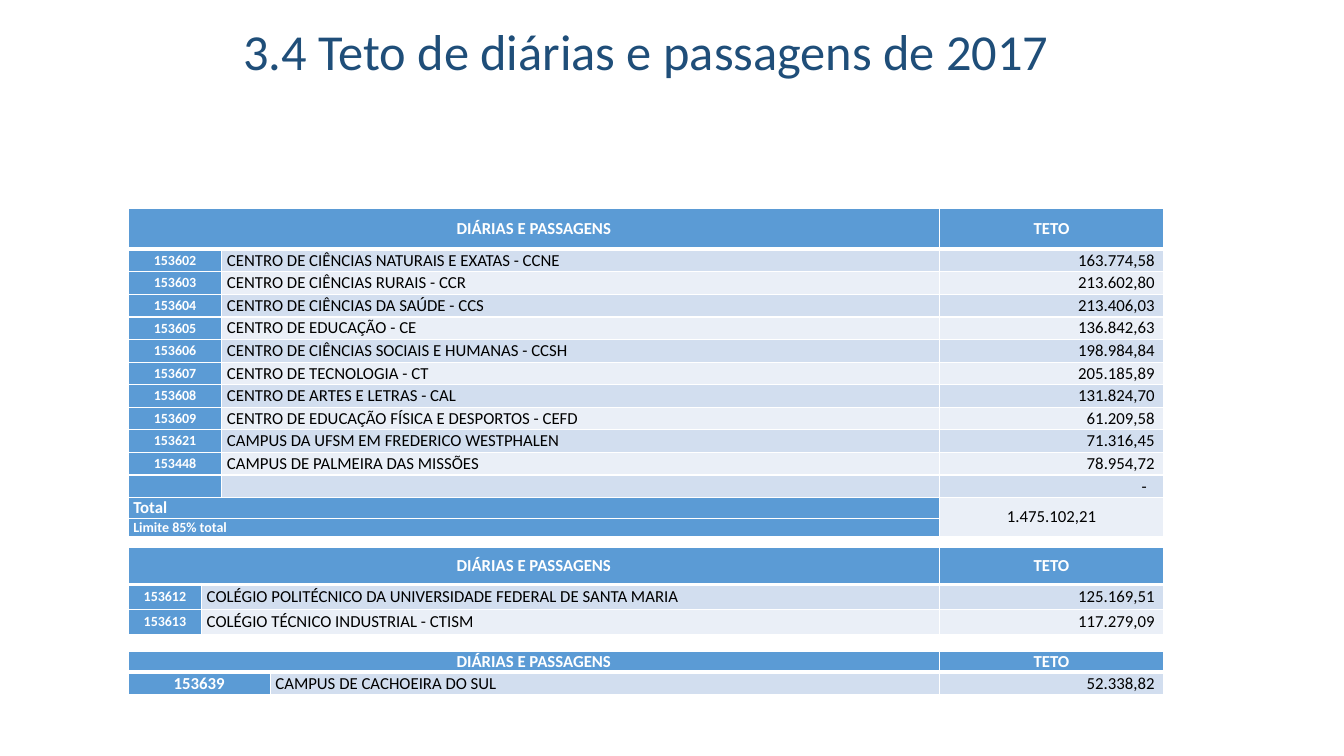
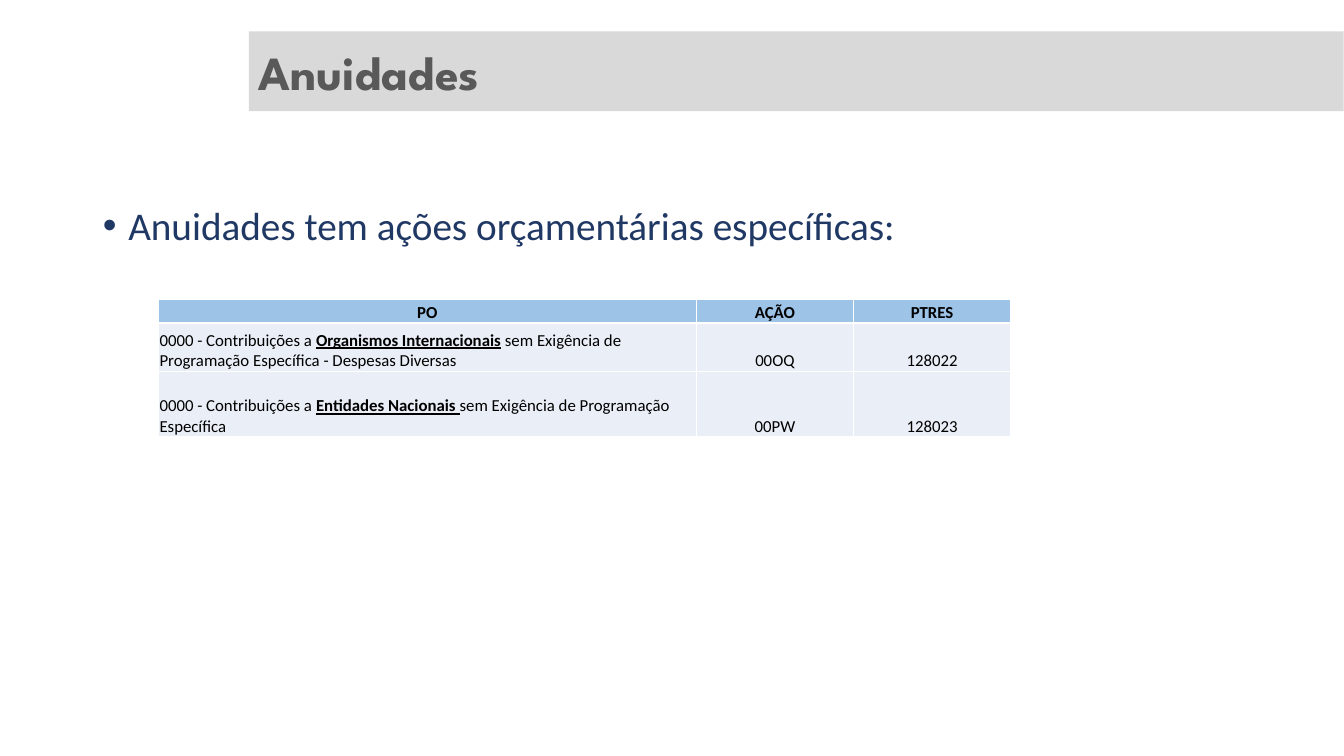
from lxml.etree import SubElement
from pptx import Presentation
from pptx.dml.color import RGBColor
from pptx.enum.text import MSO_ANCHOR as Anchor, MSO_AUTO_SIZE as AutoSize, PP_ALIGN as Align
from pptx.oxml.ns import qn
from pptx.util import Cm, Pt

# Shared look
FONT = "Calibri"
WHITE, BLACK = "FFFFFF", "000000"
BLUE, SKY = "5B9BD5", "9DC3E6"
BANDS = ("D2DEEF", "EAEFF7")

# Content: code, unit, ceiling
CENTRES = [
    ("153602", "CENTRO DE CIÊNCIAS NATURAIS E EXATAS - CCNE", "163.774,58"),
    ("153603", "CENTRO DE CIÊNCIAS RURAIS - CCR", "213.602,80"),
    ("153604", "CENTRO DE CIÊNCIAS DA SAÚDE - CCS", "213.406,03"),
    ("153605", "CENTRO DE EDUCAÇÃO - CE", "136.842,63"),
    ("153606", "CENTRO DE CIÊNCIAS SOCIAIS E HUMANAS - CCSH", "198.984,84"),
    ("153607", "CENTRO DE TECNOLOGIA - CT", "205.185,89"),
    ("153608", "CENTRO DE ARTES E LETRAS - CAL", "131.824,70"),
    ("153609", "CENTRO DE EDUCAÇÃO FÍSICA E DESPORTOS - CEFD", "61.209,58"),
    ("153621", "CAMPUS DA UFSM EM FREDERICO WESTPHALEN", "71.316,45"),
    ("153448", "CAMPUS DE PALMEIRA DAS MISSÕES", "78.954,72"),
    ("", "", "-"),
]
SCHOOLS = [
    ("153612", "COLÉGIO POLITÉCNICO DA UNIVERSIDADE FEDERAL DE SANTA MARIA", "125.169,51"),
    ("153613", "COLÉGIO TÉCNICO INDUSTRIAL - CTISM", "117.279,09"),
]
CAMPUSES = [("153639", "CAMPUS DE CACHOEIRA DO SUL", "52.338,82")]

# Plain text, or spans of (text, emphasised)
FEES = [
    ([("0000 - Contribuições a ", False), ("Organismos Internacionais", True),
      (" sem Exigência de Programação Específica - Despesas Diversas", False)],
     "00OQ", "128022"),
    ([("0000 - Contribuições a ", False), ("Entidades Nacionais ", True),
      ("sem Exigência de Programação Específica", False)],
     "00PW", "128023"),
]


def rgb(value):
    return RGBColor.from_string(value)


def write_span(para, text, size=12, color=BLACK, bold=False, underline=False, font=FONT):
    span = para.add_run()
    span.text = text
    span.font.name = font
    span.font.size = Pt(size)
    span.font.bold = bold
    span.font.underline = underline
    span.font.color.rgb = rgb(color)


def set_borders(cell, **widths):
    """White cell borders, one point wide unless a side says otherwise."""
    properties = cell._tc.get_or_add_tcPr()
    for side in "LRTB":
        line = SubElement(properties, qn(f"a:ln{side}"), w=str(Pt(widths.get(side, 1))))
        SubElement(SubElement(line, qn("a:solidFill")), qn("a:srgbClr"), val=WHITE)


def fill_cell(cell, content, fill, size=12, align=Align.LEFT, anchor=Anchor.MIDDLE,
              inset=0.13, right=None, borders=None, **style):
    set_borders(cell, **(borders or {}))
    cell.fill.solid()
    cell.fill.fore_color.rgb = rgb(fill)
    cell.vertical_anchor = anchor
    cell.margin_left = Cm(inset)
    cell.margin_right = Cm(inset if right is None else right)
    cell.margin_top = cell.margin_bottom = Cm(0)
    para = cell.text_frame.paragraphs[0]
    para.alignment = align
    if not content:
        SubElement(para._p, qn("a:endParaRPr"), sz=str(size * 100))
    elif isinstance(content, str):
        write_span(para, content, size, **style)
    else:
        for text, strong in content:
            write_span(para, text, size, bold=strong, underline=strong, **style)


def add_grid(slide, left, top, widths, heights):
    frame = slide.shapes.add_table(len(heights), len(widths), Cm(left), Cm(top),
                                   Cm(sum(widths)), Cm(sum(heights)))
    table = frame.table
    table.first_row = table.horz_banding = False
    for column, width in zip(table.columns, widths):
        column.width = Cm(width)
    for row, height in zip(table.rows, heights):
        row.height = Cm(height)
    return table


def add_ceiling_table(slide, top, code_width, units, heights, code_size=10):
    """Header and one row a unit; the code column widens into the name column."""
    table = add_grid(slide, 3.23, top, (code_width, 20.45 - code_width, 5.64), heights)
    label = dict(fill=BLUE, color=WHITE, bold=True)
    for column, text in enumerate(("DIÁRIAS E PASSAGENS", "", "TETO")):
        fill_cell(table.cell(0, column), text, align=Align.CENTER, borders={"B": 3}, **label)
    table.cell(0, 0).merge(table.cell(0, 1))
    for row, (code, name, ceiling) in enumerate(units, 1):
        band = BANDS[(row - 1) % 2]
        borders = {"T": 3 if row == 1 else 1}
        fill_cell(table.cell(row, 0), code, size=code_size, align=Align.CENTER,
                  borders=borders, **label)
        fill_cell(table.cell(row, 1), name, band, borders=borders)
        fill_cell(table.cell(row, 2), ceiling, band, align=Align.RIGHT,
                  right=0.42 if ceiling == "-" else 0.22, borders=borders)
    return table


def add_totals(table, first):
    """Two label rows beside one tall total cell."""
    for row, text, size in ((first, "Total", 12), (first + 1, "Limite 85% total", 10)):
        fill_cell(table.cell(row, 0), text, BLUE, size, color=WHITE, bold=True)
        fill_cell(table.cell(row, 1), "", BLUE, size)
        fill_cell(table.cell(row, 2), "1.475.102,21" if row == first else "",
                  BANDS[1], size, Align.CENTER)
        table.cell(row, 0).merge(table.cell(row, 1))
    table.cell(first, 2).merge(table.cell(first + 1, 2))


def add_fee_table(slide):
    table = add_grid(slide, 3.99, 7.54, (13.56, 3.96, 3.96), (0.6, 1.22, 1.65))
    for row, texts in enumerate([("PO", "AÇÃO", "PTRES"), *FEES]):
        for column, content in enumerate(texts):
            style = {"bold": True} if row == 0 else {}
            fill_cell(table.cell(row, column), content, BANDS[1] if row else SKY,
                      align=Align.LEFT if row and column == 0 else Align.CENTER,
                      anchor=Anchor.BOTTOM, inset=0.03, **style)


def write_placeholder(box, text, left, top, width, height, align=Align.LEFT,
                      anchor=Anchor.TOP, spacing=1.0, **style):
    box.left, box.top, box.width, box.height = map(Cm, (left, top, width, height))
    frame = box.text_frame
    frame.word_wrap = True
    frame.auto_size = AutoSize.NONE
    frame.vertical_anchor = anchor
    para = frame.paragraphs[0]
    para.alignment = align
    para.line_spacing = spacing
    para.space_before = Pt(0)
    write_span(para, text, **style)
    return para


def build_ceilings(deck):
    slide = deck.slides.add_slide(deck.slide_layouts[5])
    write_placeholder(slide.shapes.title, "3.4 Teto de diárias e passagens de 2017",
                      1.68, 0.79, 29.21, 3.68, align=Align.CENTER, spacing=0.7,
                      size=36, color="1F4E79")
    heights = [1.02] + [0.57] * len(CENTRES) + [0.52, 0.46]
    centres = add_ceiling_table(slide, 5.26, 2.36, CENTRES, heights)
    add_totals(centres, len(CENTRES) + 1)
    add_ceiling_table(slide, 13.79, 1.85, SCHOOLS, (0.94, 0.63, 0.63))
    add_ceiling_table(slide, 16.41, 3.58, CAMPUSES, (0.53, 0.56), code_size=12)


def build_fees(deck):
    slide = deck.slides.add_slide(deck.slide_layouts[1])
    title = slide.shapes.title
    write_placeholder(title, "Anuidades", 6.27, 0.79, 27.59, 2.01, anchor=Anchor.MIDDLE,
                      size=34, color="595959", bold=True, font="League Spartan")
    title.fill.solid()
    title.fill.fore_color.rgb = rgb("D9D9D9")
    para = write_placeholder(slide.placeholders[1],
                             "Anuidades tem ações orçamentárias específicas:",
                             2.34, 5.08, 29.21, 12.09, spacing=0.9, size=28, color="203864")
    properties = para._p.get_or_add_pPr()
    properties.set("marL", str(Cm(0.64)))
    properties.set("indent", str(Cm(-0.64)))
    add_fee_table(slide)


def main():
    deck = Presentation()
    deck.slide_width, deck.slide_height = Cm(33.87), Cm(19.05)
    build_ceilings(deck)
    build_fees(deck)
    deck.save("out.pptx")


if __name__ == "__main__":
    main()
